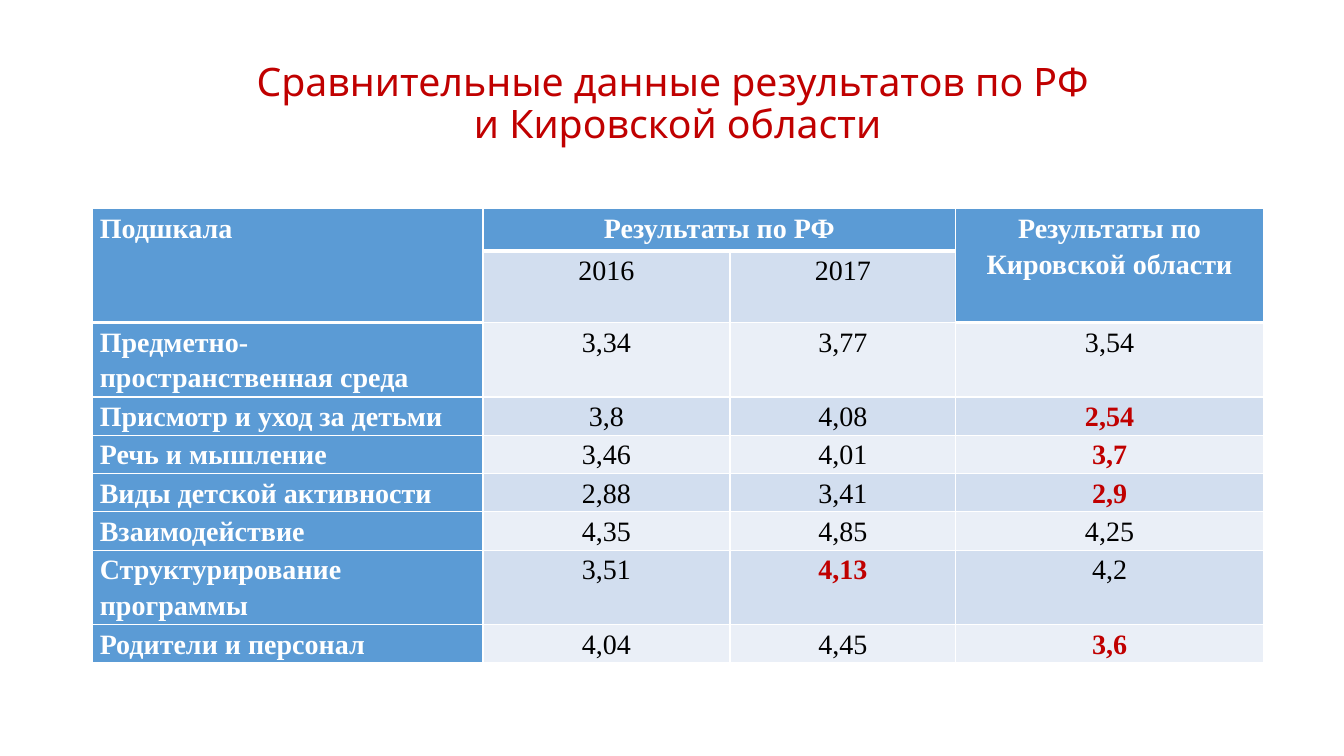
import pptx
import pptx.dml.color
import pptx.enum.text
import pptx.oxml
import pptx.oxml.ns
import pptx.util
from pptx.util import Inches

BLUE, PALE, LIGHT = "5B9BD5", "D2DEEF", "EAEFF7"
RED, WHITE, BLACK = "C00000", "FFFFFF", "000000"
ALIGN = pptx.enum.text.PP_ALIGN

COLS = [3.87, 2.45, 2.24, 3.05]
ROWS = [0.42, 0.7, 0.74, 0.38, 0.38, 0.38, 0.38, 0.74, 0.38]
DATA = [
    ["Подшкала", "Результаты по РФ", "", "Результаты по Кировской области"],
    ["", "2016", "2017", ""],
    ["Предметно-пространственная среда", "3,34", "3,77", "3,54"],
    ["Присмотр и уход за детьми", "3,8", "4,08", "2,54"],
    ["Речь и мышление", "3,46", "4,01", "3,7"],
    ["Виды детской активности", "2,88", "3,41", "2,9"],
    ["Взаимодействие", "4,35", "4,85", "4,25"],
    ["Структурирование программы", "3,51", "4,13", "4,2"],
    ["Родители и персонал", "4,04", "4,45", "3,6"],
]
MARKS = {(3, 3), (4, 3), (5, 3), (7, 2), (8, 3)}  # values shown in red
SPANS = [((0, 0), (1, 0)), ((0, 1), (0, 2)), ((0, 3), (1, 3))]


def color(code):
    return pptx.dml.color.RGBColor.from_string(code)


def add_run(para, text, size, face, code, bold=False):
    run = para.add_run()
    run.text = text
    font = run.font
    font.size, font.name, font.bold = pptx.util.Pt(size), face, bold
    font.color.rgb = color(code)


def add_edge(cell, side, width):
    space = pptx.oxml.ns.nsdecls("a")
    cell._tc.get_or_add_tcPr().append(pptx.oxml.parse_xml(
        f'<a:ln{side} {space} w="{pptx.util.Pt(width)}"><a:solidFill>'
        f'<a:srgbClr val="{WHITE}"/></a:solidFill></a:ln{side}>'))


def is_head(row, col):
    return row == 0 or (row == 1 and col in (0, 3))


def fill_cell(cell, row, col):
    # Borders: thick under the header
    top = 3 if row and is_head(row - 1, col) else 1
    base = 3 if is_head(row, col) else 1
    for side, width in zip("LRTB", (1, 1, top, base)):
        add_edge(cell, side, width)

    # Fill: blue header and first column, banded body
    blue = is_head(row, col) or col == 0
    cell.fill.solid()
    cell.fill.fore_color.rgb = color(BLUE if blue else PALE if row % 2 else LIGHT)
    cell.margin_left = cell.margin_right = Inches(0.07)
    cell.margin_top = cell.margin_bottom = 0

    # Text
    if DATA[row][col]:
        mark = (row, col) in MARKS
        para = cell.text_frame.paragraphs[0]
        para.alignment = ALIGN.CENTER if col else ALIGN.LEFT
        para.line_spacing = 1.15
        code = WHITE if blue else RED if mark else BLACK
        add_run(para, DATA[row][col], 20, "Times New Roman", code, blue or mark)


def add_title(slide, left, top, width, height):
    title = slide.shapes.title
    title.left, title.top = Inches(left), Inches(top)
    title.width, title.height = Inches(width), Inches(height)
    frame = title.text_frame
    frame.word_wrap = True
    frame.vertical_anchor = pptx.enum.text.MSO_ANCHOR.MIDDLE
    frame.margin_left = frame.margin_right = 0
    frame.margin_top = frame.margin_bottom = 0
    para = frame.paragraphs[0]
    para.alignment = ALIGN.CENTER
    para.line_spacing = 0.9
    add_run(para, "Сравнительные данные результатов по РФ", 28, "Noto Sans", RED)
    para.add_line_break()
    add_run(para, " и Кировской области", 28, "Noto Sans", RED)


def add_scores(slide, left, top):
    table = slide.shapes.add_table(
        len(ROWS), len(COLS), Inches(left), Inches(top),
        Inches(sum(COLS)), Inches(sum(ROWS))).table
    for col, width in zip(table.columns, COLS):
        col.width = Inches(width)
    for row, height in zip(table.rows, ROWS):
        row.height = Inches(height)
    for start, end in SPANS:
        table.cell(*start).merge(table.cell(*end))
    for row in range(len(ROWS)):
        for col in range(len(COLS)):
            fill_cell(table.cell(row, col), row, col)


def main():
    deck = pptx.Presentation()
    deck.slide_width, deck.slide_height = Inches(13.33), Inches(7.5)
    slide = deck.slides.add_slide(deck.slide_layouts[5])
    add_title(slide, 0.92, 0.4, 11.5, 1.28)
    add_scores(slide, 0.92, 2.07)
    deck.save("out.pptx")


if __name__ == "__main__":
    main()
